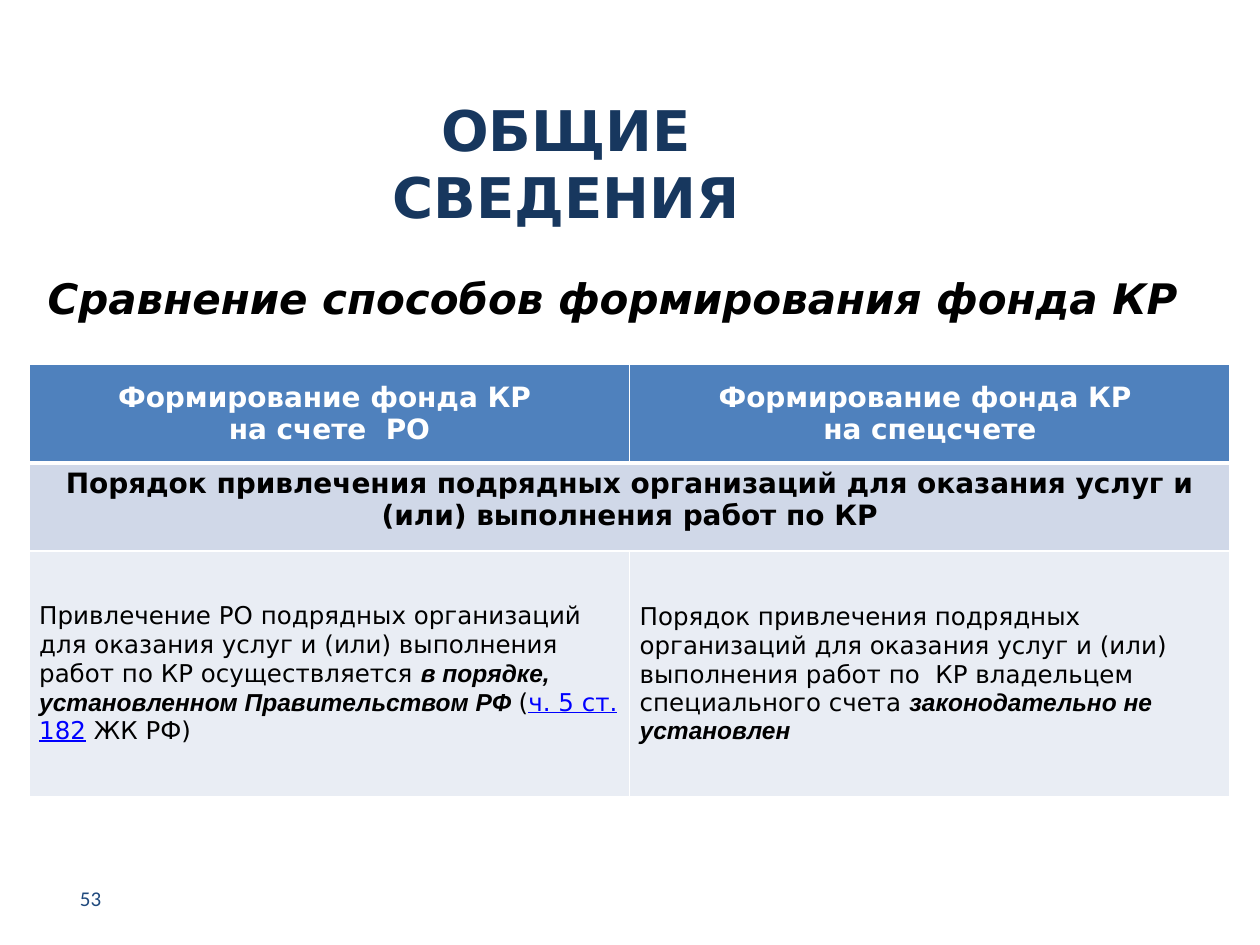
from lxml.etree import SubElement as Sub
from pptx import Presentation
from pptx.dml.color import RGBColor as Rgb
from pptx.enum.text import MSO_ANCHOR as Anchor, PP_ALIGN as Align
from pptx.oxml.ns import qn
from pptx.util import Cm, Pt

HUES = {"navy": "17375E", "page": "1F497D", "black": "000000", "white": "FFFFFF",
        "link": "0000FF", "head": "4F81BD", "band": "D0D8E8", "pale": "E9EDF4"}
SANS = "DejaVu Sans"

TITLE = [[("ОБЩИЕ СВЕДЕНИЯ", {"size": 32, "hue": "navy", "bold": True})]]
LEAD = [[("Сравнение способов формирования фонда КР",
          {"size": 24, "bold": True, "slant": True})]]
PAGE = [[("53", {"size": 12, "hue": "page", "font": "Calibri"})]]

HEAD = {"size": 16, "hue": "white", "bold": True}
BAND = {"size": 16, "bold": True}
BODY = {"size": 14}
KEY = {"size": 14, "font": "Arial", "bold": True, "slant": True}
LINK = {"size": 14, "hue": "link", "line": True}

ROWS = [
    ("head", 1.98, Align.CENTER, [
        [[("Формирование фонда КР ", HEAD)], [("на счете  РО", HEAD)]],
        [[("Формирование фонда КР ", HEAD)], [("на спецсчете", HEAD)]],
    ]),
    ("band", 1.78, Align.CENTER, [
        [[("Порядок привлечения подрядных организаций для оказания услуг и "
           "(или) выполнения работ по КР", BAND)]],
    ]),
    ("pale", 4.95, Align.LEFT, [
        [[("Привлечение РО подрядных организаций для оказания услуг и (или) "
           "выполнения работ по КР осуществляется ", BODY),
          ("в порядке, установленном Правительством РФ ", KEY),
          ("(", BODY), ("ч. 5 ст. 182", LINK), (" ЖК РФ)", BODY)]],
        [[("Порядок привлечения подрядных организаций для оказания услуг и (или) "
           "выполнения работ по  КР владельцем специального счета ", BODY),
          ("законодательно не установлен", KEY)]],
    ]),
]
COLS = 2


def tint(name):
    return Rgb.from_string(HUES[name])


def write(frame, paras, align):
    frame.word_wrap = True
    for i, runs in enumerate(paras):
        para = frame.add_paragraph() if i else frame.paragraphs[0]
        para.alignment = align
        for text, look in runs:
            run = para.add_run()
            run.text = text
            font = run.font
            font.name = look.get("font", SANS)
            font.size = Pt(look["size"])
            font.bold = look.get("bold", False)
            font.italic = look.get("slant", False)
            font.underline = look.get("line", False)
            font.color.rgb = tint(look.get("hue", "black"))


def edge(cell, base):
    props = cell._tc.get_or_add_tcPr()
    for side, wide in (("L", 1), ("R", 1), ("T", 1), ("B", base)):
        line = Sub(props, qn(f"a:ln{side}"), w=str(Pt(wide)))
        fill = Sub(line, qn("a:solidFill"))
        Sub(fill, qn("a:srgbClr"), val=HUES["white"])


def place(shape, left, top, width, height):
    shape.left, shape.top = Cm(left), Cm(top)
    shape.width, shape.height = Cm(width), Cm(height)


def build():
    deck = Presentation()
    deck.slide_width, deck.slide_height = Cm(25.4), Cm(19.05)
    slide = deck.slides.add_slide(deck.slide_layouts[5])

    title = slide.shapes.title
    place(title, 6.15, 1.4, 10.52, 3.76)
    title.text_frame.vertical_anchor = Anchor.MIDDLE
    write(title.text_frame, TITLE, Align.CENTER)

    lead = slide.shapes.add_textbox(Cm(0.71), Cm(5.36), Cm(24.31), Cm(12.5))
    write(lead.text_frame, LEAD, Align.LEFT)

    page = slide.shapes.add_textbox(Cm(0.89), Cm(17.6), Cm(1.4), Cm(1.02))
    page.text_frame.vertical_anchor = Anchor.MIDDLE
    write(page.text_frame, PAGE, Align.RIGHT)

    high = sum(row[1] for row in ROWS)
    grid = slide.shapes.add_table(len(ROWS), COLS, Cm(0.59), Cm(7.35),
                                  Cm(24.21), Cm(high)).table
    for r, (fill, tall, align, texts) in enumerate(ROWS):
        grid.rows[r].height = Cm(tall)
        if len(texts) < COLS:
            grid.cell(r, 0).merge(grid.cell(r, COLS - 1))
        for c in range(COLS):
            cell = grid.cell(r, c)
            edge(cell, 1 if r else 3)
            cell.fill.solid()
            cell.fill.fore_color.rgb = tint(fill)
            cell.margin_left = cell.margin_right = Cm(0.2)
            cell.margin_top = cell.margin_bottom = Cm(0.1)
            cell.vertical_anchor = Anchor.TOP if fill == "band" else Anchor.MIDDLE
            if c < len(texts):
                write(cell.text_frame, texts[c], align)
            if fill == "band":
                cell.text_frame.paragraphs[0].space_after = Pt(6)

    deck.save("out.pptx")


if __name__ == "__main__":
    build()
